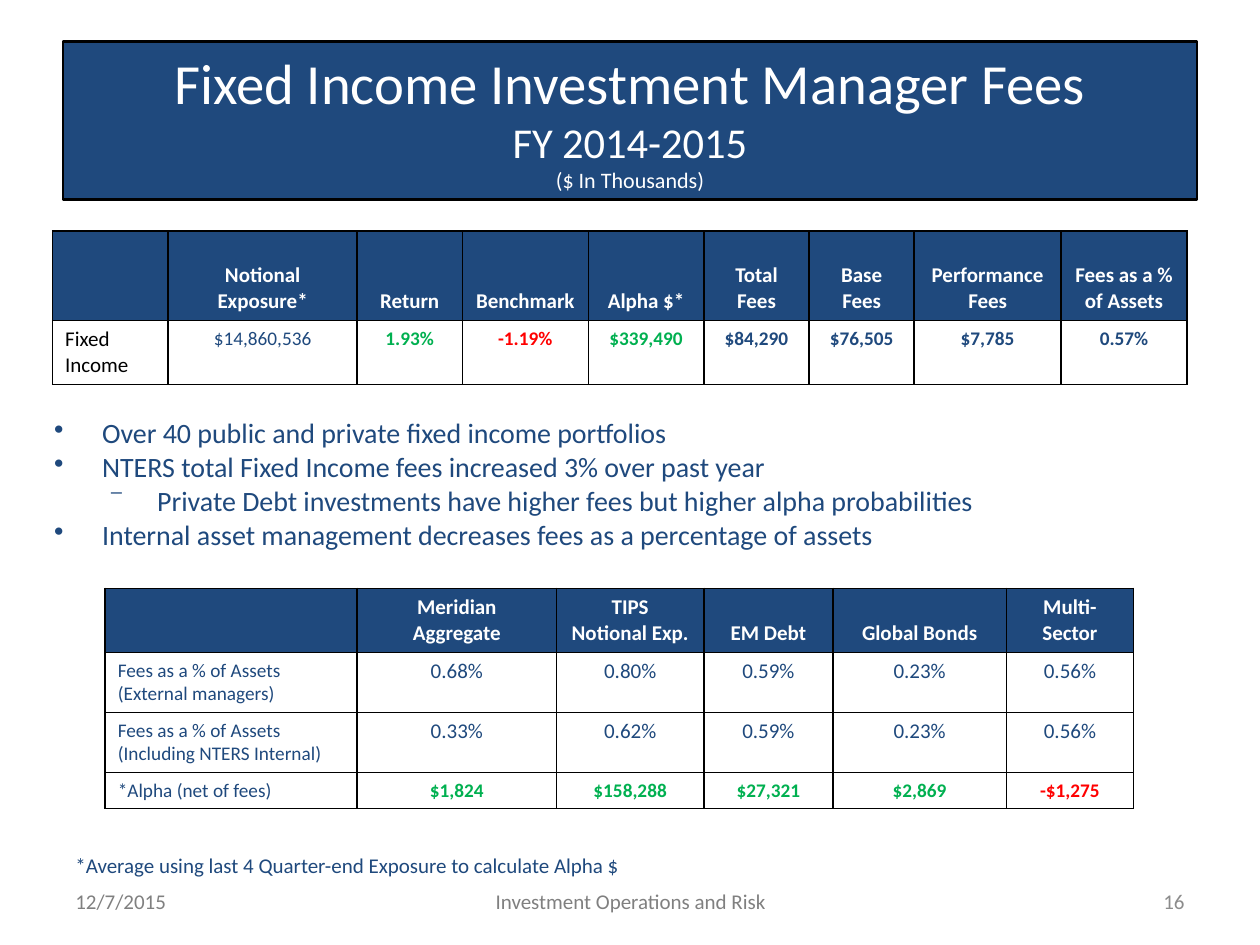
from lxml.etree import SubElement
from pptx import Presentation
from pptx.dml.color import RGBColor
from pptx.enum.shapes import MSO_SHAPE
from pptx.enum.text import MSO_ANCHOR, PP_ALIGN
from pptx.oxml.ns import qn
from pptx.util import Cm, Pt

INK = {"navy": "1F497D", "white": "FFFFFF", "black": "000000", "green": "00B050",
       "red": "FF0000", "gray": "808080", "pale": "8C8C8C"}
LEFT, MID, RIGHT = PP_ALIGN.LEFT, PP_ALIGN.CENTER, PP_ALIGN.RIGHT


class Deck:
    """Hold the style and the current slide, and draw each kind of element."""

    def __init__(self, font):
        self.font = font
        self.show = Presentation()
        self.show.slide_width, self.show.slide_height = Cm(25.4), Cm(19.05)
        self.slide = self.show.slides.add_slide(self.show.slide_layouts[6])

    def hue(self, name):
        return RGBColor.from_string(INK[name])

    def style(self, font, size, ink, bold=False):
        font.name, font.size, font.bold = self.font, Pt(size), bold
        font.color.rgb = self.hue(ink)

    def fill_text(self, frame, text, size, ink, bold=False, align=LEFT):
        frame.word_wrap = True
        frame.text = text
        for para in frame.paragraphs:
            para.alignment = align
            self.style(para.font, size, ink, bold)

    def rect(self, box, fill, line=None):
        shape = self.slide.shapes.add_shape(MSO_SHAPE.RECTANGLE, *map(Cm, box))
        shape.shadow.inherit = False
        shape.fill.solid()
        shape.fill.fore_color.rgb = self.hue(fill)
        if line:
            shape.line.color.rgb = self.hue(line)
            shape.line.width = Pt(1.5)
        else:
            shape.line.fill.background()
        shape.text_frame.vertical_anchor = MSO_ANCHOR.MIDDLE
        return shape.text_frame

    def title(self, box, lines):
        frame = self.rect(box, "navy", "black")
        frame.word_wrap = True
        para = frame.paragraphs[0]
        para.alignment = MID
        for spot, (text, size) in enumerate(lines):
            if spot:
                para.add_line_break()
            run = para.add_run()
            run.text = text
            self.style(run.font, size, "white")

    def label(self, box, text, ink, align=LEFT):
        frame = self.slide.shapes.add_textbox(*map(Cm, box)).text_frame
        frame.vertical_anchor = MSO_ANCHOR.MIDDLE
        self.fill_text(frame, text, 12, ink, align=align)

    def bullets(self, box, items):
        frame = self.slide.shapes.add_textbox(*map(Cm, box)).text_frame
        self.fill_text(frame, "\n".join(text for _, text in items), 16, "navy")
        for para, (level, _) in zip(frame.paragraphs, items):
            para.level = level
            para.space_before = Pt(0.2)
            props = para._p.get_or_add_pPr()
            props.set("marL", str(Cm((0.97, 2.08)[level])))
            props.set("indent", str(-Cm(0.97)))
            mark = props.makeelement(qn("a:buChar"), {"char": "•⁻"[level]})
            props.find(qn("a:defRPr")).addprevious(mark)

    def edge(self, cell):
        props = cell._tc.get_or_add_tcPr()
        for spot, side in enumerate(("lnL", "lnR", "lnT", "lnB")):
            line = props.makeelement(qn(f"a:{side}"), {"w": str(Pt(1))})
            fill = SubElement(line, qn("a:solidFill"))
            SubElement(fill, qn("a:srgbClr"), val=INK["black"])
            props.insert(spot, line)

    def table(self, left, top, wide, high, head, rows):
        box = left, top, sum(wide), sum(high)
        grid = self.slide.shapes.add_table(len(high), len(wide), *map(Cm, box)).table
        grid.horz_banding = False
        for col, width in zip(grid.columns, wide):
            col.width = Cm(width)
        for row, height in zip(grid.rows, high):
            row.height = Cm(height)
        top_row = [(text, 12, "white", True, MID) for text in head]
        for y, row in enumerate([top_row] + rows):
            for x, value in enumerate(row):
                cell = grid.cell(y, x)
                self.fill_text(cell.text_frame, *value)
                if y:
                    cell.fill.background()
                else:
                    cell.fill.solid()
                    cell.fill.fore_color.rgb = self.hue("navy")
                    cell.vertical_anchor = MSO_ANCHOR.BOTTOM
                self.edge(cell)


def cells(texts, size, inks, bold):
    """Give centred table cells, one ink for each text."""
    return [(text, size, ink, bold, MID) for text, ink in zip(texts, inks)]


def main():
    """Build the fee slide."""
    deck = Deck("Calibri")
    deck.title((1.27, 0.84, 22.86, 3.18), [
        ("Fixed Income Investment Manager Fees", 32.4),
        ("FY 2014-2015", 24.3), ("($ In Thousands)", 12.6)])

    foot, high = 17.65, 1.02
    deck.label((1.27, foot, 5.92, high), "12/7/2015", "gray")
    deck.label((8.69, foot, 8.05, high), "Investment Operations and Risk", "gray", MID)
    page = deck.rect((18.21, foot, 5.92, high), "white")
    deck.fill_text(page, "16", 12, "pale", align=RIGHT)

    deck.bullets((0.84, 8.26, 23.7, 3.6), [
        (0, "Over 40 public and private fixed income portfolios"),
        (0, "NTERS total Fixed Income fees increased 3% over past year"),
        (1, "Private Debt investments have higher fees but higher alpha probabilities"),
        (0, "Internal asset management decreases fees as a percentage of assets")])

    sums = ["1.93%", "-1.19%", "$339,490", "$84,290", "$76,505", "$7,785", "0.57%"]
    tones = ["green", "red", "green"] + ["navy"] * 4
    deck.table(
        1.06, 4.66, [2.33, 3.81, 2.12, 2.54, 2.33, 2.12, 2.12, 2.96, 2.54], [1.8, 1.29],
        ["", "Notional Exposure*", "Return", "Benchmark", "Alpha $*", "Total Fees",
         "Base Fees", "Performance Fees", "Fees as a % of Assets"],
        [[("Fixed Income", 12, "black"), ("$14,860,536", 11, "navy", False, MID)]
         + cells(sums, 11, tones, True)])

    rates = [("External managers", ["0.68%", "0.80%", "0.59%", "0.23%", "0.56%"]),
             ("Including NTERS Internal", ["0.33%", "0.62%", "0.59%", "0.23%", "0.56%"])]
    rows = [[(f"Fees as a % of Assets\n({name})", 11, "navy")]
            + cells(vals, 12, ["navy"] * 5, False) for name, vals in rates]
    gains = ["$1,824", "$158,288", "$27,321", "$2,869", "-$1,275"]
    rows.append([("*Alpha (net of fees)", 11, "navy")]
                + cells(gains, 11, ["green"] * 4 + ["red"], True))
    deck.table(
        2.12, 11.86, [5.08, 4.02, 2.97, 2.6, 3.5, 2.56], [1.29, 1.21, 1.21, 0.73],
        ["", "Meridian\nAggregate", "TIPS\nNotional Exp.", "EM Debt", "Global Bonds",
         "Multi-Sector"], rows)

    deck.label((1.27, 16.94, 15.24, high),
               "*Average using last 4 Quarter-end Exposure to calculate Alpha $", "navy")
    deck.show.save("out.pptx")


if __name__ == "__main__":
    main()
